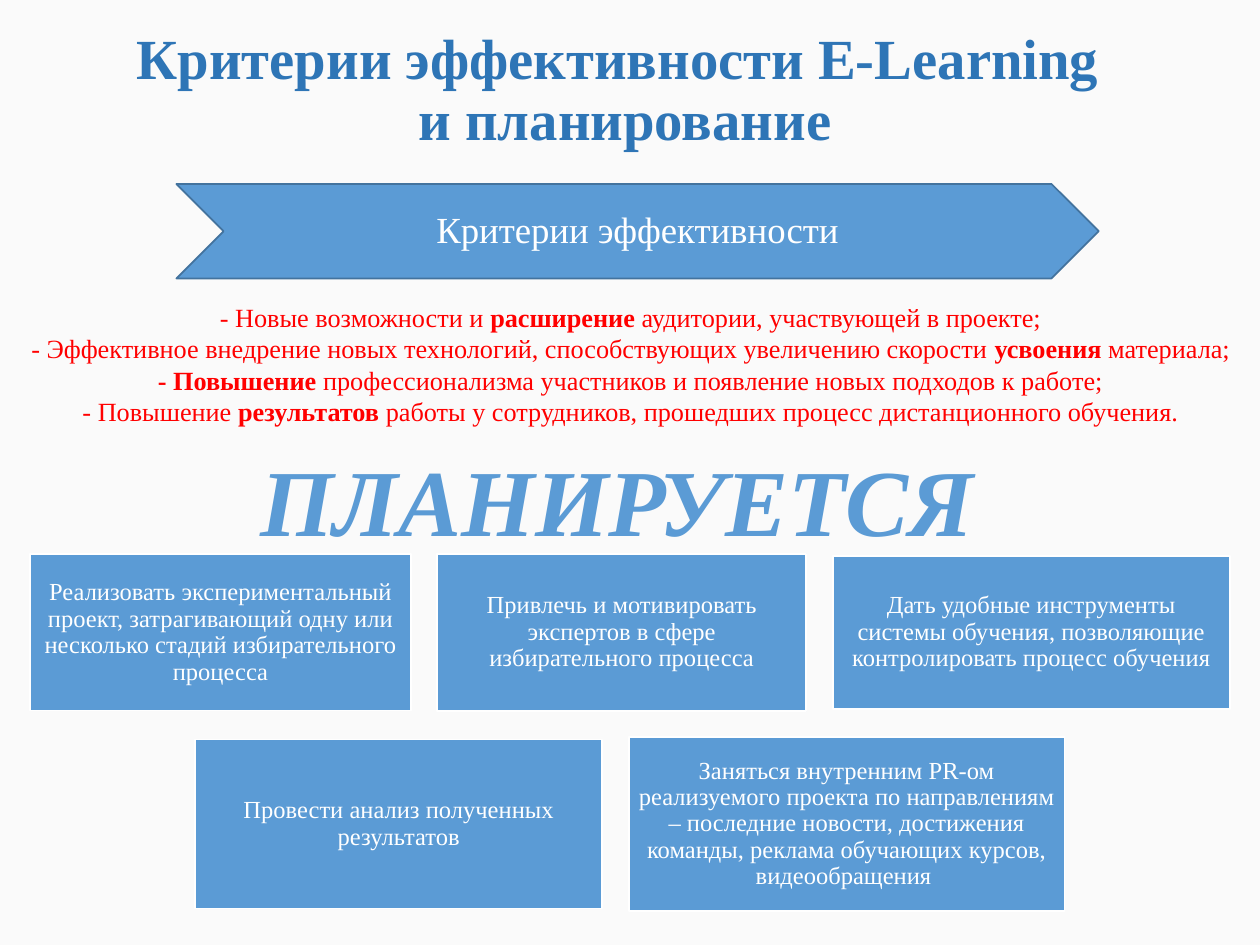
from pptx import Presentation
from pptx import util as u
from pptx.dml.color import RGBColor
from pptx.enum import shapes, text

FONT = "Times New Roman"
BACKGROUND = RGBColor(0xFA, 0xFA, 0xFA)
TITLE_BLUE = RGBColor(0x2E, 0x75, 0xB6)
BLUE = RGBColor(0x5B, 0x9B, 0xD5)
EDGE_BLUE = RGBColor(0x43, 0x73, 0x9E)
RED = RGBColor(0xFF, 0x00, 0x00)
WHITE = RGBColor(0xFF, 0xFF, 0xFF)

CRITERIA = [
    ("- Новые возможности и ", "расширение", " аудитории, участвующей в проекте;"),
    ("- Эффективное внедрение новых технологий, способствующих увеличению скорости ",
     "усвоения", " материала;"),
    ("", "- Повышение",
     " профессионализма участников и появление новых подходов к работе;"),
    ("- Повышение ", "результатов",
     " работы у сотрудников, прошедших процесс дистанционного обучения."),
]
PLAN_ROWS = [
    (5.02, [
        (3.02, 1.24, "Реализовать экспериментальный проект, затрагивающий одну или "
                     "несколько стадий избирательного процесса"),
        (2.93, 1.25, "Привлечь и мотивировать экспертов в сфере избирательного процесса"),
        (3.15, 1.21, "Дать удобные инструменты системы обучения, позволяющие "
                     "контролировать процесс обучения"),
    ]),
    (6.54, [
        (3.23, 1.34, "Провести анализ полученных результатов"),
        (3.46, 1.38, "Заняться внутренним PR-ом реализуемого проекта по направлениям – "
                     "последние новости, достижения команды, реклама обучающих курсов, "
                     "видеообращения "),
    ]),
]


def box(left, top, width, height):
    """Convert a box in inches to lengths."""
    return [u.Inches(v) for v in (left, top, width, height)]


def add_run(p, words, size, color, bold=False, italic=False):
    """Add one formatted run to a paragraph."""
    r = p.add_run()
    r.text = words
    r.font.name, r.font.size = FONT, u.Pt(size)
    r.font.bold, r.font.italic = bold, italic
    r.font.color.rgb = color


def add_block(s, kind, area, words, size, edge):
    """Add a filled shape with centred white text."""
    sp = s.shapes.add_shape(kind, *box(*area))
    sp.shadow.inherit = False
    sp.fill.solid()
    sp.fill.fore_color.rgb = BLUE
    sp.line.color.rgb = edge
    sp.line.width = u.Pt(1)
    tf = sp.text_frame
    tf.word_wrap = True
    tf.vertical_anchor = text.MSO_ANCHOR.MIDDLE
    p = tf.paragraphs[0]
    p.alignment = text.PP_ALIGN.CENTER
    p.line_spacing = 0.9
    add_run(p, words, size, WHITE)
    return sp


def add_title(s, area):
    """Place and fill the title placeholder."""
    sp = s.shapes.title
    sp.left, sp.top, sp.width, sp.height = box(*area)
    tf = sp.text_frame
    tf.auto_size = text.MSO_AUTO_SIZE.NONE
    tf.vertical_anchor = text.MSO_ANCHOR.MIDDLE
    p = tf.paragraphs[0]
    p.alignment = text.PP_ALIGN.CENTER
    p.line_spacing = 0.9
    add_run(p, "Критерии эффективности E-Learning ", 32.4, TITLE_BLUE, True)
    p.add_line_break()
    add_run(p, "и планирование", 32.4, TITLE_BLUE, True)


def add_criteria(s, area):
    """Add the centred list of criteria with emphasised words."""
    tf = s.shapes.add_textbox(*box(*area)).text_frame
    tf.word_wrap = True
    tf.auto_size = text.MSO_AUTO_SIZE.SHAPE_TO_FIT_TEXT
    for i, (before, strong, after) in enumerate(CRITERIA):
        p = tf.add_paragraph() if i else tf.paragraphs[0]
        p.alignment = text.PP_ALIGN.CENTER
        for words in filter(None, (before, strong, after)):
            add_run(p, words, 15, RED, words == strong)


def add_plan_heading(s, area):
    """Add the large italic heading of the plan."""
    tf = s.shapes.add_textbox(*box(*area)).text_frame
    tf.word_wrap = False
    tf.auto_size = text.MSO_AUTO_SIZE.SHAPE_TO_FIT_TEXT
    p = tf.paragraphs[0]
    p.alignment = text.PP_ALIGN.CENTER
    add_run(p, "ПЛАНИРУЕТСЯ", 54, BLUE, True, True)


def add_plan_row(s, center_x, center_y, cards, gap=0.21):
    """Add a row of cards with equal gaps, centred on a point."""
    total = sum(width for width, _, _ in cards) + gap * (len(cards) - 1)
    left = center_x - total / 2
    for width, height, words in cards:
        area = (left, center_y - height / 2, width, height)
        sp = add_block(s, shapes.MSO_SHAPE.RECTANGLE, area, words, 14, WHITE)
        tf = sp.text_frame
        tf.margin_left = tf.margin_right = u.Inches(0.06)
        tf.margin_top = tf.margin_bottom = u.Inches(0.06)
        left += width + gap


def main():
    """Build the slide and save it."""
    prs = Presentation()
    prs.slide_width, prs.slide_height = u.Inches(10), u.Inches(7.5)
    s = prs.slides.add_slide(prs.slide_layouts[5])
    s.background.fill.solid()
    s.background.fill.fore_color.rgb = BACKGROUND
    add_title(s, (0.65, 0, 8.62, 1.45))
    for center_y, cards in PLAN_ROWS:
        add_plan_row(s, 5, center_y, cards)
    add_plan_heading(s, (1.94, 3.46, 5.92, 1.01))
    add_block(s, shapes.MSO_SHAPE.CHEVRON, (1.4, 1.46, 7.32, 0.75),
              "Критерии эффективности", 21, EDGE_BLUE)
    add_criteria(s, (0.09, 2.34, 9.83, 1.11))
    prs.save("out.pptx")


if __name__ == "__main__":
    main()
